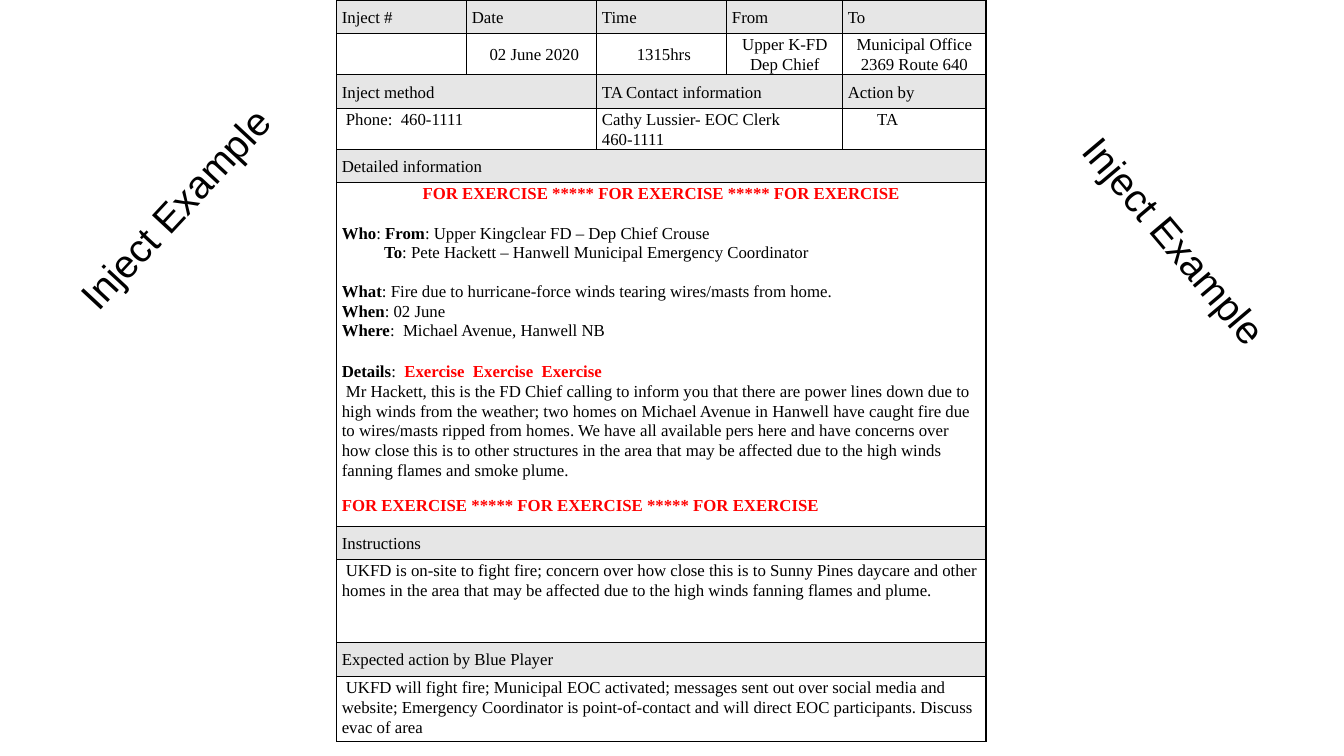
"""Build the exercise inject slide: one form table with a slanted label on each side."""
import pptx
import pptx.util
import pptx.dml.color
import pptx.enum.text
import pptx.oxml
import pptx.oxml.ns

Inches, Pt = pptx.util.Inches, pptx.util.Pt
ALIGN = pptx.enum.text.PP_ALIGN
ANCHOR = pptx.enum.text.MSO_ANCHOR
COLORS = {"ink": "000000", "red": "FF0000", "head": "E6E6E6"}

WIDTHS = [1.29, 1.29, 1.29, 1.15, 1.42]
LOOKS = {"plain": (False, "ink"), "bold": (True, "ink"), "alert": (True, "red")}
ALERT = "FOR EXERCISE ***** FOR EXERCISE ***** FOR EXERCISE"
CENTER = {"align": ALIGN.CENTER}
LEAD = {"indent": 0.04}


def para(*runs, **opts):
    """Pair the runs of a paragraph with its options."""
    return [run if isinstance(run, tuple) else (run, "plain") for run in runs], opts


DETAILS = [
    para((ALERT, "alert"), after=14.5, **CENTER),
    para(("Who", "bold"), ": ", ("From", "bold"), ": Upper Kingclear FD – Dep Chief Crouse"),
    para(("To", "bold"), ": Pete Hackett – Hanwell Municipal Emergency Coordinator",
         indent=0.42, line=0.98, after=13.5),
    para(("What", "bold"), ": Fire due to hurricane-force winds tearing wires/masts from home."),
    para(("When", "bold"), ": 02 June"),
    para(("Where", "bold"), ":  Michael Avenue, Hanwell NB", after=14.5),
    para(("Details", "bold"), ":  ", ("Exercise  Exercise  Exercise", "alert")),
    para("Mr Hackett, this is the FD Chief calling to inform you that there are power lines "
         "down due to high winds from the weather; two homes on Michael Avenue in Hanwell have "
         "caught fire due to wires/masts ripped from homes. We have all available pers here and "
         "have concerns over how close this is to other structures in the area that may be "
         "affected due to the high winds fanning flames and smoke plume.", after=10.8, **LEAD),
    para((ALERT, "alert")),
]
INSTRUCT = para("UKFD is on-site to fight fire; concern over how close this is to Sunny Pines "
                "daycare and other homes in the area that may be affected due to the high winds "
                "fanning flames and plume.", **LEAD)
ACTION = para("UKFD will fight fire; Municipal EOC activated; messages sent out over social "
              "media and website; Emergency Coordinator is point-of-contact and will direct EOC "
              "participants. Discuss evac of area", **LEAD)

ONES, PAIRS, WHOLE = [1] * 5, [2, 2, 1], [5]
ROWS = [
    (0.33, "head", ONES, [[para(name)] for name in ("Inject #", "Date", "Time", "From", "To")]),
    (0.4, "middle", ONES, [
        [para("")],
        [para("02 June 2020", margin=0.05, **CENTER)],
        [para("1315hrs", margin=0.04, **CENTER)],
        [para("Upper K-FD Dep Chief", **CENTER)],
        [para("Municipal Office", **CENTER), para("2369 Route 640", **CENTER)]]),
    (0.34, "head", PAIRS, [[para(name)] for name in
                           ("Inject method", "TA Contact information", "Action by")]),
    (0.4, "top", PAIRS, [
        [para("Phone:  460-1111", **LEAD)],
        [para("Cathy Lussier- EOC Clerk"), para("460-1111")],
        [para("TA", indent=0.29)]]),
    (0.33, "head", WHOLE, [[para("Detailed information")]]),
    (3.41, "top", WHOLE, [DETAILS]),
    (0.33, "head", WHOLE, [[para("Instructions")]]),
    (0.82, "top", WHOLE, [[INSTRUCT]]),
    (0.34, "head", WHOLE, [[para("Expected action by Blue Player")]]),
    (0.65, "top", WHOLE, [[ACTION]]),
]
LABEL = "Inject Example"
SIDES = [(0.19, 1.78, 312.8), (10.11, 2.1, 49.9)]


def paint(font, color, size, face):
    """Set the face, size and colour of a font."""
    font.name, font.size = face, Pt(size)
    font.color.rgb = pptx.dml.color.RGBColor.from_string(COLORS[color])


def write(frame, paras):
    """Fill a cell with paragraphs."""
    for index, (runs, opts) in enumerate(paras):
        line = frame.paragraphs[0] if index == 0 else frame.add_paragraph()
        line.alignment = opts.get("align", ALIGN.LEFT)
        line.line_spacing = opts.get("line", 1.07)
        line.space_after = Pt(opts.get("after", 0))
        props = line._p.get_or_add_pPr()
        props.set("marL", str(Inches(opts.get("margin", 0))))
        props.set("indent", str(Inches(opts.get("indent", 0))))
        paint(line.font, "ink", 12, "Times New Roman")
        for text, look in runs:
            run = line.add_run()
            run.text = text
            bold, color = LOOKS[look]
            run.font.bold = bold
            paint(run.font, color, 12, "Times New Roman")


def frame_cell(cell, kind):
    """Set the borders, insets, anchor and fill of a cell."""
    props = cell._tc.get_or_add_tcPr()
    for side in "LRTB":
        props.append(pptx.oxml.parse_xml(
            f'<a:ln{side} {pptx.oxml.ns.nsdecls("a")} w="{Pt(1)}"><a:solidFill>'
            f'<a:srgbClr val="{COLORS["ink"]}"/></a:solidFill></a:ln{side}>'))
    cell.margin_left = cell.margin_right = Inches(0.05)
    cell.margin_top, cell.margin_bottom = Inches(0.01), 0
    cell.vertical_anchor = ANCHOR.TOP if kind == "top" else ANCHOR.MIDDLE
    if kind == "head":
        cell.fill.solid()
        cell.fill.fore_color.rgb = pptx.dml.color.RGBColor.from_string(COLORS["head"])
    else:
        cell.fill.background()


def add_form(slide):
    """Add the inject form."""
    heights = [row[0] for row in ROWS]
    form = slide.shapes.add_table(len(ROWS), len(WIDTHS), Inches(3.34), 0,
                                  Inches(sum(WIDTHS)), Inches(sum(heights))).table
    form.first_row = form.horz_banding = False
    for column, width in zip(form.columns, WIDTHS):
        column.width = Inches(width)
    for index, (height, kind, spans, cells) in enumerate(ROWS):
        form.rows[index].height = Inches(height)
        for cell in form.rows[index].cells:
            frame_cell(cell, kind)
        left = 0
        for span, paras in zip(spans, cells):
            cell = form.cell(index, left)
            if span > 1:
                cell.merge(form.cell(index, left + span - 1))
            write(cell.text_frame, paras)
            left += span


def add_label(slide, left, top, angle):
    """Add one slanted label."""
    box = slide.shapes.add_textbox(Inches(left), Inches(top), Inches(3.08), Inches(0.57))
    box.rotation = angle
    frame = box.text_frame
    frame.word_wrap = True
    frame.auto_size = pptx.enum.text.MSO_AUTO_SIZE.SHAPE_TO_FIT_TEXT
    line = frame.paragraphs[0]
    line.text, line.alignment = LABEL, ALIGN.CENTER
    paint(line.font, "ink", 28, "Arial")


def main():
    """Build and save the slide."""
    deck = pptx.Presentation()
    deck.slide_width, deck.slide_height = Inches(13.33), Inches(7.5)
    slide = deck.slides.add_slide(deck.slide_layouts[6])
    add_form(slide)
    for side in SIDES:
        add_label(slide, *side)
    deck.save("out.pptx")


if __name__ == "__main__":
    main()
